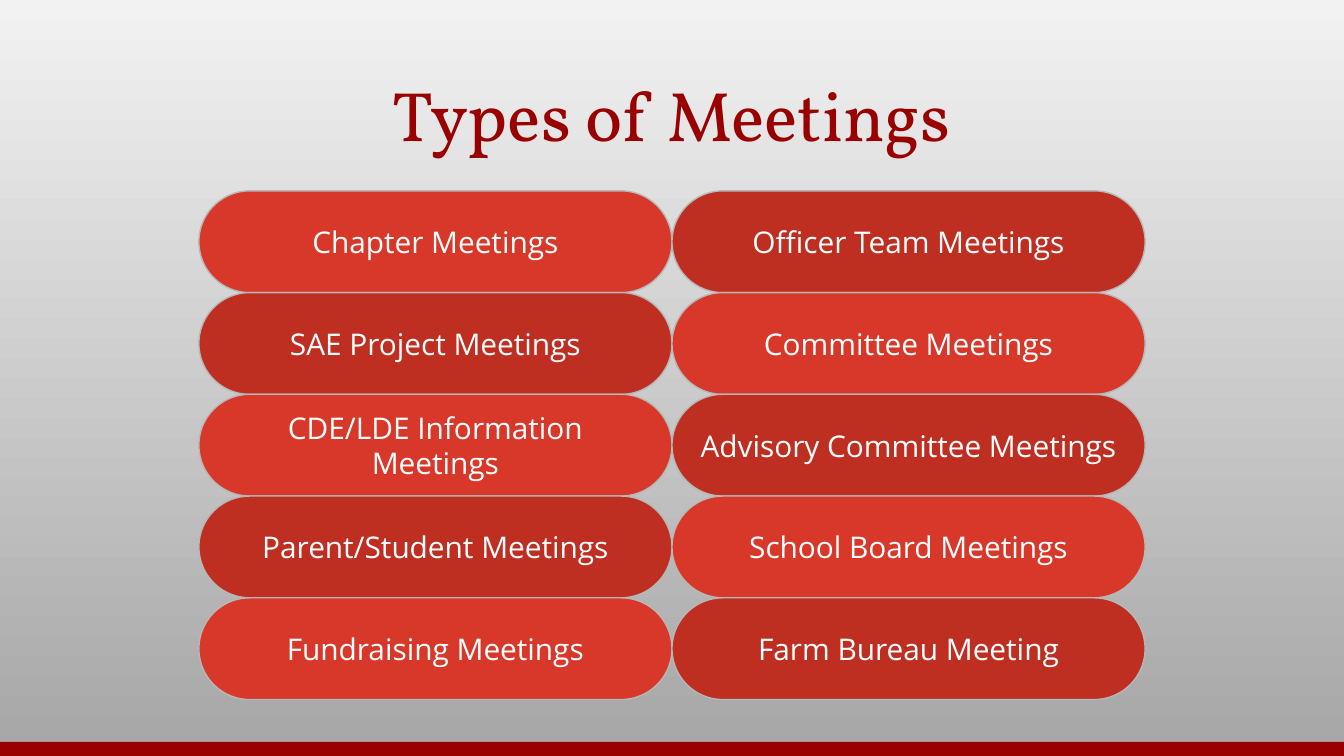
from pptx import Presentation
from pptx import util as u
from pptx.dml.color import RGBColor
from pptx.enum import shapes, text

WIDTH = 10
HEIGHT = WIDTH * 9 / 16
DARK_RED = "990000"
PILL_FILLS = ["D83829", "BE2F22"]

MEETING_COLUMNS = [
    ["Chapter Meetings", "SAE Project Meetings", "CDE/LDE Information Meetings",
     "Parent/Student Meetings", "Fundraising Meetings"],
    ["Officer Team Meetings", "Committee Meetings", "Advisory Committee Meetings",
     "School Board Meetings", "Farm Bureau Meeting"],
]

# Grid of meeting pills, in inches, centred across the slide
GRID_LEFT, GRID_TOP, GRID_BOTTOM_MARGIN = 1.48, 1.42, 0.42
COLUMN_WIDTH = (WIDTH - 2 * GRID_LEFT) / len(MEETING_COLUMNS)
ROW_HEIGHT = (HEIGHT - GRID_TOP - GRID_BOTTOM_MARGIN) / len(MEETING_COLUMNS[0])


def color(hex_code):
    return RGBColor.from_string(hex_code)


def inches(*lengths):
    return [u.Inches(length) for length in lengths]


def paint_background(page, top, bottom):
    fill = page.background.fill
    fill.gradient()
    fill.gradient_angle = 270
    for stop, hex_code in zip(fill.gradient_stops, (top, bottom)):
        stop.color.rgb = color(hex_code)


def write(shape, words, font_name, size, hex_code, anchor):
    frame = shape.text_frame
    frame.word_wrap = True
    frame.vertical_anchor = anchor
    frame.margin_left = frame.margin_right = u.Inches(0.1)
    frame.margin_top = frame.margin_bottom = u.Inches(0.1)
    para = frame.paragraphs[0]
    para.text = words
    para.alignment = text.PP_ALIGN.CENTER
    para.font.name = font_name
    para.font.size = u.Pt(size)
    para.font.color.rgb = color(hex_code)


def add_filled(parent, preset, area, hex_code):
    shape = parent.shapes.add_shape(preset, *inches(*area))
    shape.shadow.inherit = False
    shape.fill.solid()
    shape.fill.fore_color.rgb = color(hex_code)
    return shape


def add_footer_bar(page):
    area = (0, 5.52, WIDTH, HEIGHT - 5.52)
    bar = add_filled(page, shapes.MSO_SHAPE.RECTANGLE, area, DARK_RED)
    bar.line.fill.background()


def add_title(page, words):
    box = page.shapes.add_textbox(*inches(0.34, 0.35, WIDTH - 2 * 0.34, 0.91))
    write(box, words, "Vollkorn", 37.5, DARK_RED, text.MSO_ANCHOR.BOTTOM)


def add_pill(group, column, row, words):
    area = (GRID_LEFT + column * COLUMN_WIDTH, GRID_TOP + row * ROW_HEIGHT,
            COLUMN_WIDTH, ROW_HEIGHT)
    # Fills alternate like a checkerboard
    fill = PILL_FILLS[(column + row) % 2]
    pill = add_filled(group, shapes.MSO_SHAPE.ROUNDED_RECTANGLE, area, fill)
    pill.adjustments[0] = 0.5
    pill.line.color.rgb = color("B7B7B7")
    pill.line.width = u.Pt(0.75)
    write(pill, words, "Open Sans", 16, "FFFFFF", text.MSO_ANCHOR.MIDDLE)


def main():
    deck = Presentation()
    deck.slide_width, deck.slide_height = inches(WIDTH, HEIGHT)
    page = deck.slides.add_slide(deck.slide_layouts[6])

    # Backdrop and title
    paint_background(page, "F2F2F2", "A6A6A6")
    add_footer_bar(page)
    add_title(page, "Types of Meetings")

    # Meeting pills
    group = page.shapes.add_group_shape()
    for column, meetings in enumerate(MEETING_COLUMNS):
        for row, words in enumerate(meetings):
            add_pill(group, column, row, words)

    deck.save("out.pptx")


if __name__ == "__main__":
    main()
